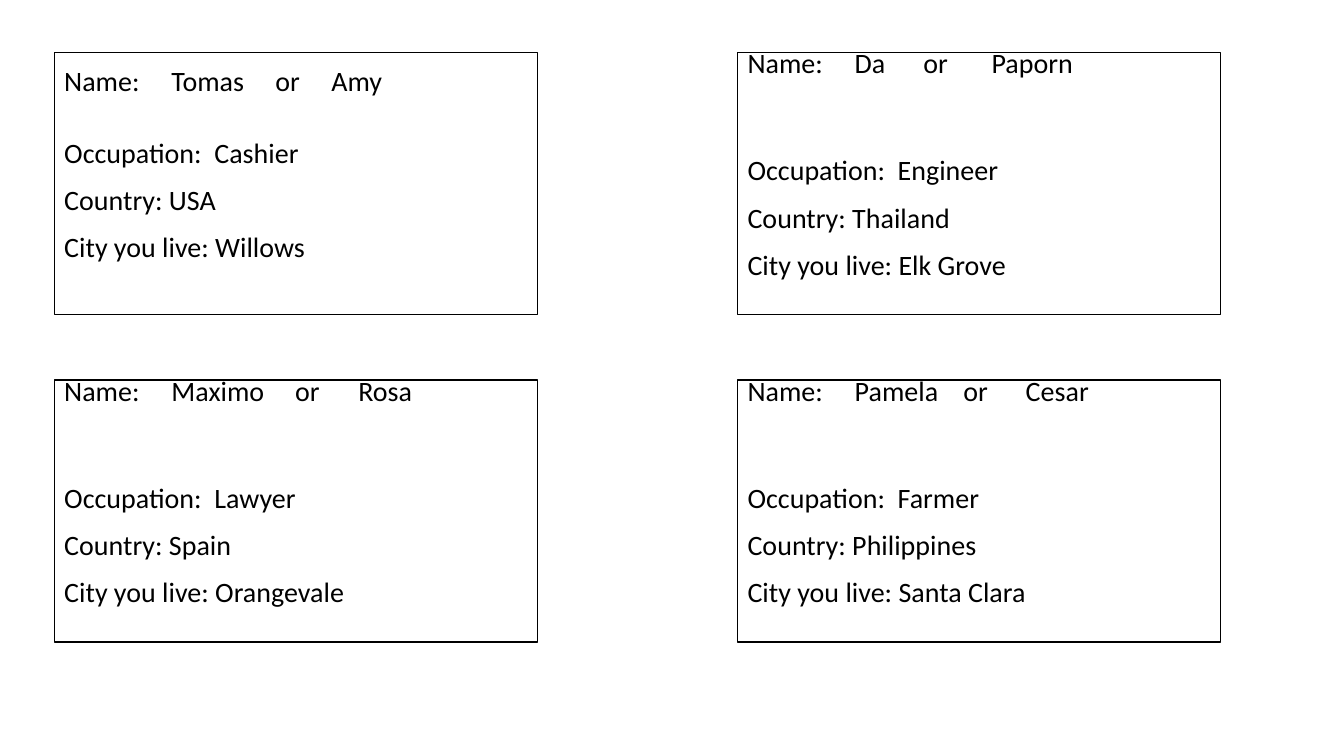
from lxml.etree import SubElement
from pptx import Presentation
from pptx.dml.color import RGBColor
from pptx.enum.shapes import MSO_SHAPE
from pptx.enum.text import MSO_ANCHOR, PP_ALIGN
from pptx.oxml.ns import qn
from pptx.util import Cm, Pt

BLACK = RGBColor(0x00, 0x00, 0x00)
WHITE = RGBColor(0xFF, 0xFF, 0xFF)

# Card grid, in cm
LEFT, TOP = 1.37, 1.32
CARD_WIDTH, CARD_HEIGHT = 12.17, 6.6
COLUMN_STEP, ROW_STEP = 17.22, 8.26
FIRST_NAME_TAB = 2.7

# Column, row, first name, second name, tabs of "or" and second name (cm),
# gap below the names (pt), occupation, country, city
CARDS = [
    (0, 0, "Tomas", "Amy", (5.32, 6.73), 25.5, "Cashier", "USA", "Willows"),
    (0, 1, "Maximo", "Rosa", (5.82, 7.41), 51, "Lawyer", "Spain", "Orangevale"),
    (1, 1, "Pamela", "Cesar", (5.44, 7.01), 51, "Farmer", "Philippines", "Santa Clara"),
    (1, 0, "Da", "Paporn", (4.43, 6.15), 51, "Engineer", "Thailand", "Elk Grove"),
]


def write_line(paragraph, text, size=20, color=BLACK, space_after=8, tabs=()):
    """Fill one paragraph with text, its format and its tab stops (cm)."""
    paragraph.alignment = PP_ALIGN.LEFT
    paragraph.line_spacing = 1.07
    paragraph.space_after = Pt(space_after)
    if tabs:
        tab_list = SubElement(paragraph._p.get_or_add_pPr(), qn("a:tabLst"))
        for position in tabs:
            SubElement(tab_list, qn("a:tab"), pos=str(Cm(position)), algn="l")
    run = paragraph.add_run()
    run.text = text
    run.font.name = "Calibri"
    run.font.size = Pt(size)
    run.font.color.rgb = color


def add_card(slide, column, row):
    """Draw one outlined card and return its text frame."""
    card = slide.shapes.add_shape(
        MSO_SHAPE.RECTANGLE,
        Cm(LEFT + column * COLUMN_STEP), Cm(TOP + row * ROW_STEP),
        Cm(CARD_WIDTH), Cm(CARD_HEIGHT))
    card.shadow.inherit = False
    card.fill.solid()
    card.fill.fore_color.rgb = WHITE
    card.line.color.rgb = BLACK
    card.line.width = Pt(1)
    details = card.text_frame
    details.word_wrap = True
    details.vertical_anchor = MSO_ANCHOR.MIDDLE
    details.margin_bottom = Cm(1.2)
    return details


def main():
    presentation = Presentation()
    presentation.slide_width = Cm(33.87)
    presentation.slide_height = Cm(19.05)
    slide = presentation.slides.add_slide(presentation.slide_layouts[6])

    # Role cards
    for column, row, first, second, tabs, gap, occupation, country, city in CARDS:
        details = add_card(slide, column, row)
        write_line(details.paragraphs[0], f"Name:\t{first}\tor\t{second}",
                   space_after=gap, tabs=(FIRST_NAME_TAB, *tabs))
        for text in (f"Occupation:  {occupation}", f"Country: {country}",
                     f"City you live: {city}"):
            write_line(details.add_paragraph(), text)

    presentation.save("out.pptx")


if __name__ == "__main__":
    main()
